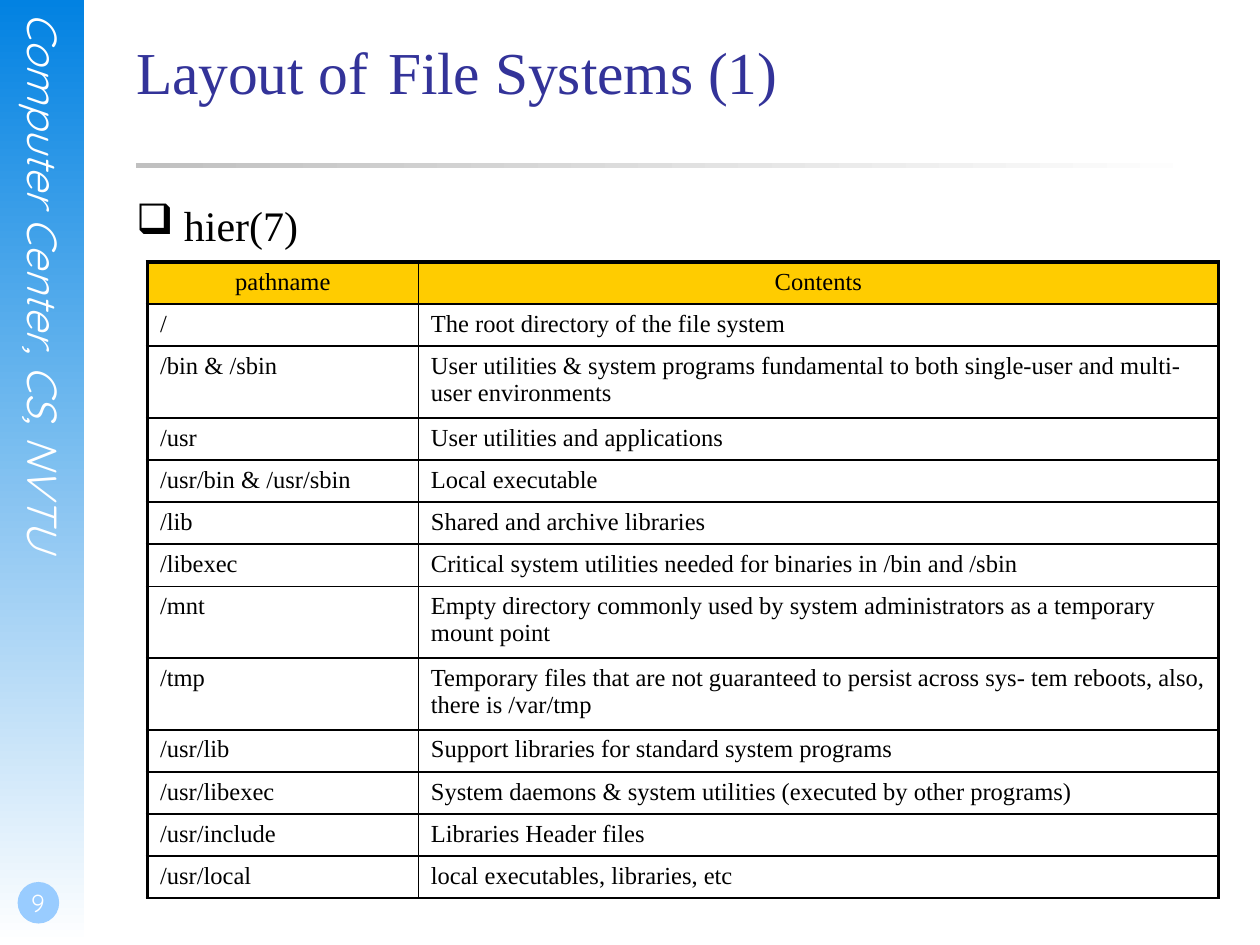
from pptx import Presentation
from pptx.dml.color import RGBColor
from pptx.enum.shapes import MSO_SHAPE as Shape
from pptx.enum.text import MSO_ANCHOR as Anchor, MSO_AUTO_SIZE as Auto, PP_ALIGN as Align
from pptx.oxml.ns import qn
from pptx.util import Inches, Pt
from lxml.etree import SubElement as Sub

BLACK = RGBColor(0x00, 0x00, 0x00)
WHITE = RGBColor(0xFF, 0xFF, 0xFF)
BLUE = RGBColor(0x02, 0x82, 0xE2)
SKY = RGBColor(0x99, 0xCC, 0xFF)
GREY = RGBColor(0xC0, 0xC0, 0xC0)
NAVY = RGBColor(0x33, 0x33, 0x99)
GOLD = RGBColor(0xFF, 0xCC, 0x00)

SERIF = "Times New Roman"
SANS = "Quicksand"

SIDE = "Computer Center, CS, NVTU"
PAGE = "9"
TITLE = "Layout of \tFile Systems (1)"
TOPIC = "hier(7)"
ROWS = [
    ("pathname", "Contents"),
    ("/", "The root directory of the file system"),
    ("/bin & /sbin", "User utilities & system programs fundamental to both "
                     "single-user and multi-user environments"),
    ("/usr", "User utilities and applications"),
    ("/usr/bin & /usr/sbin", "Local executable"),
    ("/lib", "Shared and archive libraries"),
    ("/libexec", "Critical system utilities needed for binaries in /bin and /sbin"),
    ("/mnt", "Empty directory commonly used by system administrators "
             "as a temporary mount point"),
    ("/tmp", "Temporary files that are not guaranteed to persist across "
             "sys- tem reboots, also, there is /var/tmp"),
    ("/usr/lib", "Support libraries for standard system programs"),
    ("/usr/libexec", "System daemons & system utilities (executed by other programs)"),
    ("/usr/include", "Libraries Header files"),
    ("/usr/local", "local executables, libraries, etc"),
]
COLS = (2.15, 6.35)
LOW, HIGH = 0.33, 0.57  # heights of rows with one and two lines
FIT = 70                # characters that fit on one line of Contents
THIN, THICK = 1, 2.25
LEFT, WIDE = 1.08, 8.5


def add_box(slide, kind, box):
    shape = slide.shapes.add_shape(kind, *map(Inches, box))
    shape.shadow.inherit = False
    shape.line.fill.background()
    return shape


def fade(shape, color, angle):
    """Fill with a gradient from color to white."""
    shape.fill.gradient()
    shape.fill.gradient_angle = angle
    for stop, rgb in zip(shape.fill.gradient_stops, (color, WHITE)):
        stop.color.rgb = rgb


def set_font(par, name, size, color):
    for run in par.runs:
        run.font.name = name
        run.font.size = Pt(size)
        run.font.color.rgb = color


def add_text(slide, box, text, name, size, color, pads=(0, 0, 0, 0)):
    frame = slide.shapes.add_textbox(*map(Inches, box)).text_frame
    frame.word_wrap = True
    (frame.margin_left, frame.margin_top,
     frame.margin_right, frame.margin_bottom) = map(Inches, pads)
    frame.text = text
    set_font(frame.paragraphs[0], name, size, color)
    return frame


def space_above(par):
    """Set the space before to a quarter of a line."""
    gap = Sub(par._p.get_or_add_pPr(), qn("a:spcBef"))
    Sub(gap, qn("a:spcPct"), val="25000")


def add_bullet(par, char, indent):
    props = par._p.get_or_add_pPr()
    props.set("marL", str(Inches(indent)))
    props.set("indent", str(-Inches(indent)))
    Sub(props, qn("a:buChar"), char=char)


def set_edges(cell, **widths):
    props = cell._tc.get_or_add_tcPr()
    for side in "LRTB":
        line = Sub(props, qn("a:ln" + side), w=str(Pt(widths.get(side, THIN))))
        fill = Sub(line, qn("a:solidFill"))
        Sub(fill, qn("a:srgbClr"), val=str(BLACK))


def add_grid(slide):
    highs = [HIGH if len(note) > FIT else LOW for _, note in ROWS]
    frame = slide.shapes.add_table(
        len(ROWS), len(COLS), Inches(1.17), Inches(2.08),
        Inches(sum(COLS)), Inches(sum(highs)))
    table = frame.table
    table.first_row = table.horz_banding = False
    for col, width in zip(table.columns, COLS):
        col.width = Inches(width)
    for r, (row, high) in enumerate(zip(ROWS, highs)):
        table.rows[r].height = Inches(high)
        for c, text in enumerate(row):
            cell = table.cell(r, c)
            edges = {"R" if c else "L": THICK}
            if r == 0:
                edges["T"] = THICK
            set_edges(cell, **edges)
            cell.text = text
            par = cell.text_frame.paragraphs[0]
            set_font(par, SERIF, 14, BLACK)
            space_above(par)
            if r == 0:
                par.alignment = Align.CENTER
                cell.fill.solid()
                cell.fill.fore_color.rgb = GOLD
            else:
                cell.fill.background()


def main():
    deck = Presentation()
    deck.slide_width, deck.slide_height = Inches(10), Inches(7.5)
    slide = deck.slides.add_slide(deck.slide_layouts[6])

    fade(add_box(slide, Shape.RECTANGLE, (0, 0, 0.67, 7.5)), BLUE, 270)
    side = add_text(slide, (0.15, 0.1, 0.4, 5.11), SIDE, SANS, 24, WHITE)
    side.auto_size = Auto.SHAPE_TO_FIT_TEXT
    side._txBody.bodyPr.set("vert", "eaVert")
    side.paragraphs[0].runs[0].font.italic = True

    disc = add_box(slide, Shape.OVAL, (0.14, 7, 0.33, 0.33))
    disc.fill.solid()
    disc.fill.fore_color.rgb = SKY
    page = add_text(slide, (0, 6.83, 0.58, 0.5), PAGE, SANS, 14, WHITE,
                    (0.02, 0, 0, 0.05))
    page.vertical_anchor = Anchor.BOTTOM
    page.paragraphs[0].alignment = Align.CENTER

    fade(add_box(slide, Shape.RECTANGLE, (LEFT, 1.29, WIDE, 0.04)), GREY, 0)
    add_text(slide, (LEFT, 0.28, WIDE, 1.25), TITLE, SERIF, 34, NAVY)
    topic = add_text(slide, (LEFT, 1.58, WIDE, 5.08), TOPIC, SERIF, 24, BLACK)
    space_above(topic.paragraphs[0])
    add_bullet(topic.paragraphs[0], "❑", 0.38)
    add_grid(slide)
    deck.save("out.pptx")


if __name__ == "__main__":
    main()
